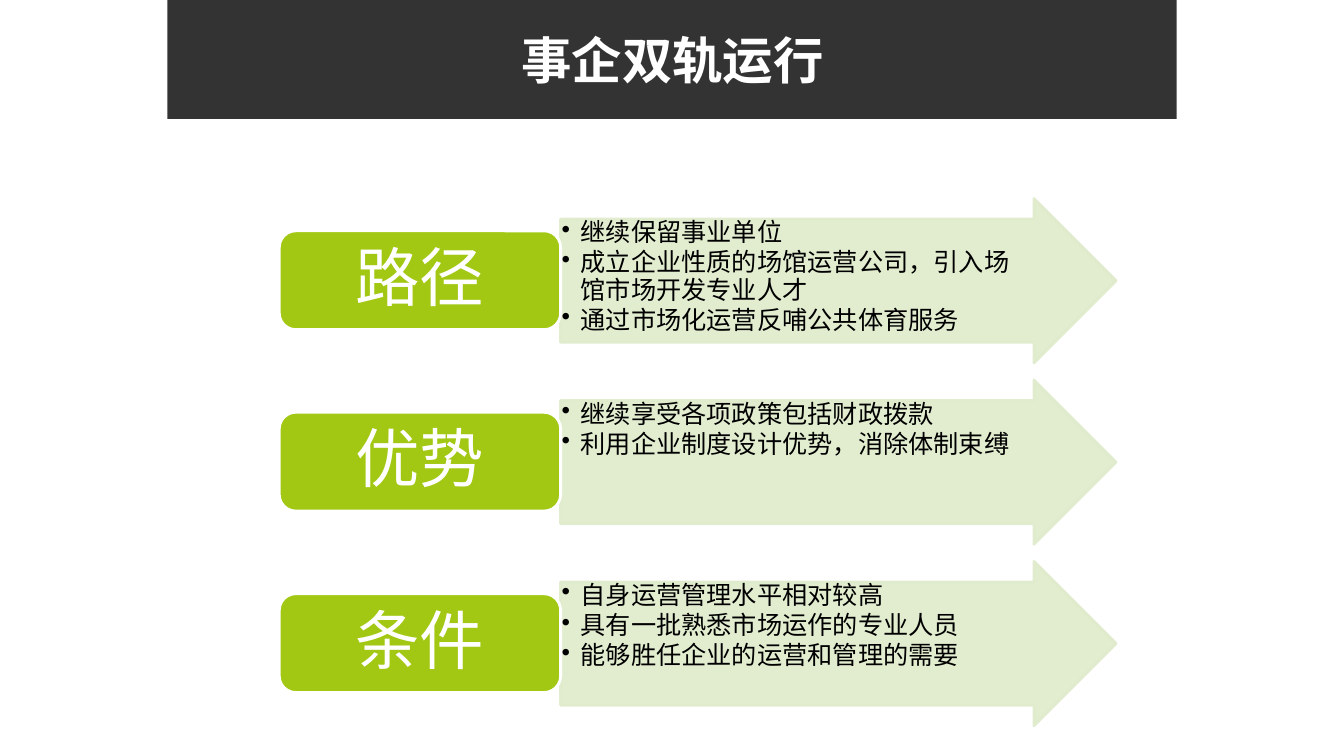
from lxml import etree
from pptx import Presentation
from pptx import util as u
from pptx.dml.color import RGBColor
from pptx.enum import shapes, text
from pptx.oxml.ns import qn

PX = 9144  # 100 px to the inch
FONT = "Noto Sans CJK SC"
WHITE, BLACK, DARK, GREEN, PALE = "FFFFFF", "000000", "333333", "A2C813", "DFEBCB"

ROWS = [
    ("路径", ["继续保留事业单位",
            "成立企业性质的场馆运营公司，引入场馆市场开发专业人才",
            "通过市场化运营反哺公共体育服务"]),
    ("优势", ["继续享受各项政策包括财政拨款",
            "利用企业制度设计优势，消除体制束缚"]),
    ("条件", ["自身运营管理水平相对较高",
            "具有一批熟悉市场运作的专业人员",
            "能够胜任企业的运营和管理的需要"]),
]


def px(n):
    return u.Emu(n * PX)


def rgb(color):
    return RGBColor.from_string(color)


def add_shape(s, kind, box, fill, line=None):
    sp = s.shapes.add_shape(kind, *map(px, box))
    sp.shadow.inherit = False
    sp.fill.solid()
    sp.fill.fore_color.rgb = rgb(fill)
    if line:
        sp.line.color.rgb = rgb(line)
        sp.line.width = u.Pt(2)
    else:
        sp.line.fill.background()
    return sp


def set_alpha(sp, percent):
    for color in sp._element.spPr.iter(qn("a:srgbClr")):
        etree.SubElement(color, qn("a:alpha"), val=str(percent * 1000))


def add_bullet(p, indent):
    pPr = p._p.get_or_add_pPr()
    pPr.set("marL", str(px(indent)))
    pPr.set("indent", str(-px(indent)))
    etree.SubElement(pPr, qn("a:buChar"), char="•")


def write(sp, lines, size, color, insets, anchor=text.MSO_ANCHOR.MIDDLE,
          align=text.PP_ALIGN.CENTER, spacing=None, after=None, bold=False, indent=0):
    tf = sp.text_frame
    tf.word_wrap = True
    tf.vertical_anchor = anchor
    tf.margin_left, tf.margin_top, tf.margin_right, tf.margin_bottom = map(px, insets)
    tf.text = "\n".join(lines)
    for p in tf.paragraphs:
        p.alignment = align
        p.line_spacing = spacing
        p.space_after = after
        if indent:
            add_bullet(p, indent)
        for r in p.runs:
            r.font.size = u.Pt(size)
            r.font.bold = bold
            r.font.name = FONT
            r.font.color.rgb = rgb(color)
            etree.SubElement(r._r.get_or_add_rPr(), qn("a:ea"), typeface=FONT)


def title_bar(s, box, title):
    sp = add_shape(s, shapes.MSO_SHAPE.RECTANGLE, box, DARK)
    write(sp, [title], 36, WHITE, (31, 5, 30, 5), bold=True)


def arrow_row(s, box, label, points):
    """Green label on the left, pale arrow with bullets on the right."""
    x, y, w, h = box
    label_w, label_h = 279, 98
    arrow = add_shape(s, shapes.MSO_SHAPE.RIGHT_ARROW,
                      (x + label_w, y, w - label_w, h), PALE, PALE)
    arrow.adjustments[0] = 0.75
    set_alpha(arrow, 89)
    # The right inset keeps the text clear of the arrow head.
    write(arrow, points, 18, BLACK, (1, 1, 43, 1), text.MSO_ANCHOR.TOP,
          text.PP_ALIGN.LEFT, 0.9, u.Pt(2), indent=19)

    tag = add_shape(s, shapes.MSO_SHAPE.ROUNDED_RECTANGLE,
                    (x, y + (h - label_h) // 2, label_w, label_h), GREEN, WHITE)
    write(tag, [label], 46, WHITE, (19, 10, 19, 10), spacing=0.9)


def main():
    prs = Presentation()
    prs.slide_width, prs.slide_height = px(1333), px(750)
    s = prs.slides.add_slide(prs.slide_layouts[6])
    title_bar(s, (166, 0, 1001, 118), "事企双轨运行")
    for i, (label, points) in enumerate(ROWS):
        arrow_row(s, (277, 197 + i * 180, 830, 163), label, points)
    prs.save("out.pptx")


if __name__ == "__main__":
    main()
